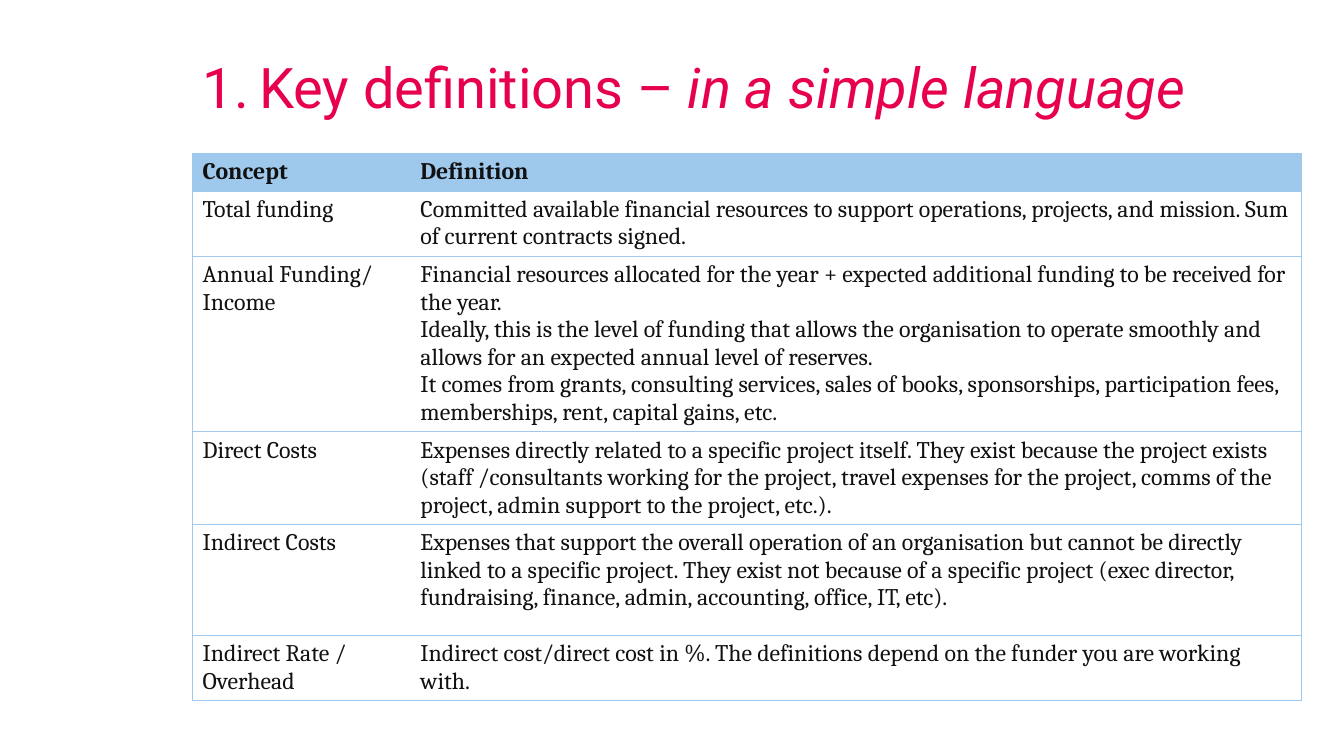
from lxml import etree
from pptx import Presentation
from pptx.dml.color import RGBColor
from pptx.enum.text import MSO_ANCHOR, MSO_AUTO_SIZE, PP_ALIGN
from pptx.oxml.ns import qn
from pptx.util import Inches, Pt

LEFT = PP_ALIGN.LEFT
MIDDLE = MSO_ANCHOR.MIDDLE
TOP = MSO_ANCHOR.TOP
NO_AUTOFIT = MSO_AUTO_SIZE.NONE
TITLE_ONLY = 5

PINK, BLUE, INK, WHITE = "E7004C", "9EC9ED", "111111", "FFFFFF"
TITLE_FORMAT = {"name": "Roboto", "size": Pt(40), "bold": False}
CELL_FORMAT = {"name": "Cambria", "size": Pt(17)}

COLUMN_WIDTHS = (2.16, 8.84)
ROW_HEIGHTS = (0.36, 0.63, 1.72, 0.9, 1.1, 0.63)
DEFINITIONS = (
    ("Concept", "Definition"),
    ("Total funding",
     "Committed available financial resources to support operations, projects, "
     "and mission. Sum of current contracts signed."),
    ("Annual Funding/ Income",
     "Financial resources allocated for the year + expected additional funding "
     "to be received for the year.\n"
     "Ideally, this is the level of funding that allows the organisation to "
     "operate smoothly and allows for an expected annual level of reserves.\n"
     "It comes from grants, consulting services, sales of books, sponsorships, "
     "participation fees, memberships, rent, capital gains, etc."),
    ("Direct Costs",
     "Expenses directly related to a specific project itself. They exist because "
     "the project exists (staff /consultants working for the project, travel "
     "expenses for the project, comms of the project, admin support to the "
     "project, etc.)."),
    ("Indirect Costs",
     "Expenses that support the overall operation of an organisation but cannot "
     "be directly linked to a specific project. They exist not because of a "
     "specific project (exec director, fundraising, finance, admin, accounting, "
     "office, IT, etc)."),
    ("Indirect Rate / Overhead",
     "Indirect cost/direct cost in %. The definitions depend on the funder you "
     "are working with."),
)


def color(value):
    return RGBColor.from_string(value)


def format_font(font, font_color, values):
    for name, value in values.items():
        setattr(font, name, value)
    font.color.rgb = color(font_color)


def number_paragraph(paragraph, indent):
    """Give the paragraph an automatic 1. with a hanging indent."""
    properties = paragraph._p.get_or_add_pPr()
    properties.set("marL", str(Inches(indent)))
    properties.set("indent", str(-Inches(indent)))
    etree.SubElement(properties, qn("a:buFont"), typeface="+mj-lt")
    etree.SubElement(properties, qn("a:buAutoNum"), type="arabicPeriod")


def set_borders(cell, visible_sides):
    """Draw the given sides (from L, R, T, B) and clear the others."""
    properties = cell._tc.get_or_add_tcPr()
    for side in "LRTB":
        line = etree.SubElement(properties, qn(f"a:ln{side}"), w=str(Pt(0.5)))
        if side in visible_sides:
            fill = etree.SubElement(line, qn("a:solidFill"))
            etree.SubElement(fill, qn("a:srgbClr"), val=BLUE)
        else:
            etree.SubElement(line, qn("a:noFill"))


def add_title(slide, left, top, width, height):
    title = slide.shapes.title
    title.left, title.top = Inches(left), Inches(top)
    title.width, title.height = Inches(width), Inches(height)
    frame = title.text_frame
    settings = {"margin_left": 0, "margin_right": 0, "margin_top": 0,
                "margin_bottom": 0, "word_wrap": True,
                "auto_size": NO_AUTOFIT, "vertical_anchor": MIDDLE}
    for name, value in settings.items():
        setattr(frame, name, value)
    paragraph = frame.paragraphs[0]
    paragraph.alignment = LEFT
    paragraph.line_spacing = 0.9
    number_paragraph(paragraph, 0.56)
    for text, italic in (("Key definitions – ", False),
                         ("in a simple language", True)):
        run = paragraph.add_run()
        run.text = text
        format_font(run.font, PINK, {**TITLE_FORMAT, "italic": italic})


def fill_cell(cell, text, is_header, visible_sides):
    set_borders(cell, visible_sides)
    cell.fill.solid()
    cell.fill.fore_color.rgb = color(BLUE if is_header else WHITE)
    cell.vertical_anchor = TOP
    cell.text = text
    for paragraph in cell.text_frame.paragraphs:
        paragraph.alignment = LEFT
        for run in paragraph.runs:
            format_font(run.font, INK, {**CELL_FORMAT, "bold": is_header})


def add_definitions_table(slide, left, top, width, height):
    table = slide.shapes.add_table(
        len(DEFINITIONS), len(COLUMN_WIDTHS), Inches(left), Inches(top),
        Inches(width), Inches(height)).table
    table.first_row = False
    table.horz_banding = False
    for column, column_width in zip(table.columns, COLUMN_WIDTHS):
        column.width = Inches(column_width)
    for row, row_height in zip(table.rows, ROW_HEIGHTS):
        row.height = Inches(row_height)
    for row_index, texts in enumerate(DEFINITIONS):
        for column_index, text in enumerate(texts):
            outer_side = "LR"[column_index]
            fill_cell(table.cell(row_index, column_index), text,
                      row_index == 0, "TB" + outer_side)


def main():
    presentation = Presentation()
    presentation.slide_width = Inches(13.33)
    presentation.slide_height = Inches(7.5)
    slide = presentation.slides.add_slide(presentation.slide_layouts[TITLE_ONLY])
    add_title(slide, 2.01, 0.57, 10.9, 0.66)
    add_definitions_table(slide, 1.91, 1.52, sum(COLUMN_WIDTHS), sum(ROW_HEIGHTS))
    presentation.save("out.pptx")


if __name__ == "__main__":
    main()
